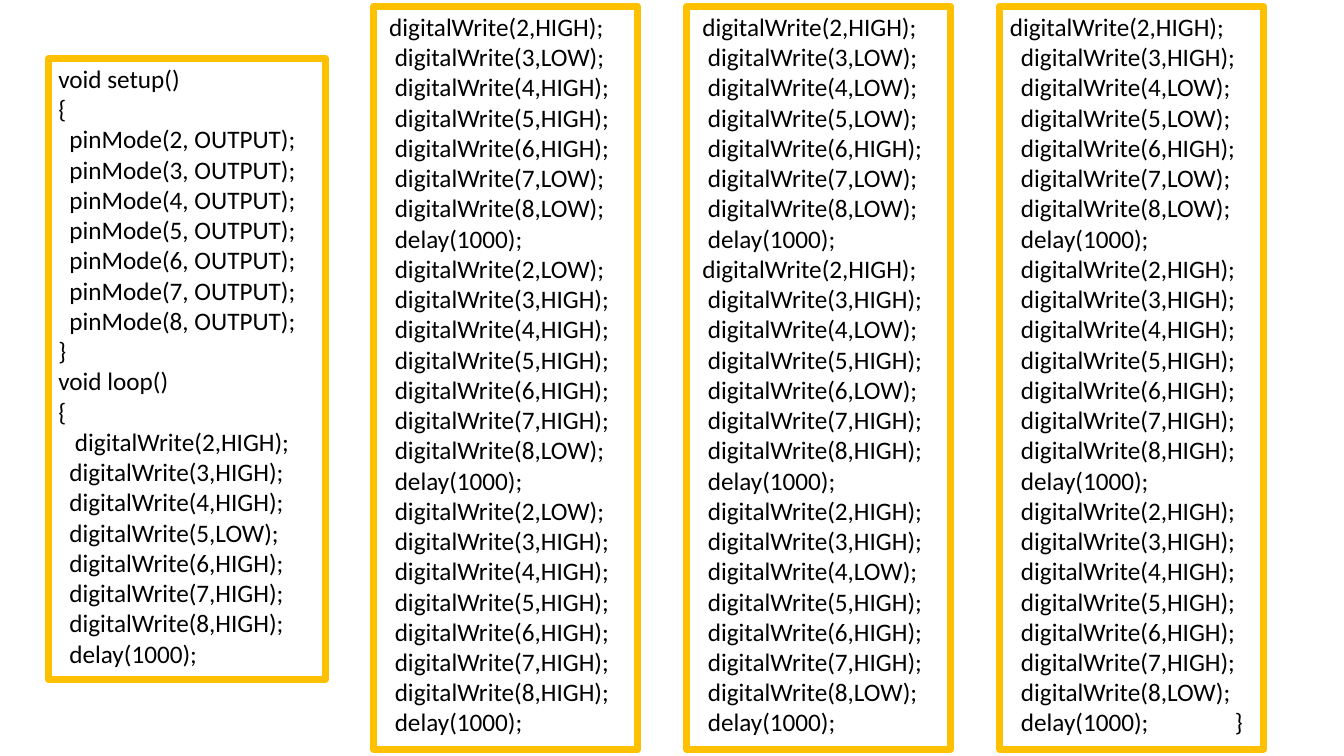
"""Builds a slide with pin control code in four framed columns."""
from dataclasses import dataclass

from lxml import etree
from pptx import Presentation
from pptx import util as u
from pptx.dml import color
from pptx.enum import text
from pptx.oxml import ns


@dataclass(frozen=True)
class Theme:
    """Colours, font and sizes of the slide."""
    frame: color.RGBColor = color.RGBColor(0xFF, 0xC0, 0x00)
    ink: color.RGBColor = color.RGBColor(0, 0, 0)
    font: str = "Calibri"
    size: u.Pt = u.Pt(18)
    border: u.Pt = u.Pt(5)
    indent: u.Cm = u.Cm(0.14)
    brace_tab: u.Cm = u.Cm(5.87)


THEME = Theme()
PINS = range(2, 9)
LOOP_COLUMNS = [
    [(1, "1011100"), (2, "0111110"), (2, "0111111")],
    [(1, "1000100"), (1, "1101011"), (2, "1101110")],
    [(0, "1100100"), (2, "1111111"), (2, "1111110")],
]


def step_lines(first_indent, levels):
    """Return (indent, code) lines that set every pin and then wait."""
    lines = [(2, f"digitalWrite({pin},{'HIGH' if level == '1' else 'LOW'});")
             for pin, level in zip(PINS, levels)]
    lines[0] = (first_indent, lines[0][1])
    return lines + [(2, "delay(1000);")]


def setup_lines():
    """Return the setup function and the start of the loop."""
    modes = [(2, f"pinMode({pin}, OUTPUT);") for pin in PINS]
    return [(0, "void setup()"), (0, "{"), *modes, (0, "}"),
            (0, "void loop()"), (0, "{"), *step_lines(3, "1110111")]


def add_right_tab(p, position):
    """Give a paragraph one right-aligned tab stop."""
    tabs = etree.SubElement(p._p.get_or_add_pPr(), ns.qn("a:tabLst"))
    etree.SubElement(tabs, ns.qn("a:tab"), pos=str(position), algn="r")


def add_code_line(p, indent, code):
    """Write one indented line of code."""
    p._p.get_or_add_pPr().set("marL", str(indent * THEME.indent))
    if "\t" in code:
        add_right_tab(p, THEME.brace_tab)
    r = p.add_run()
    r.text = code
    r.font.name = THEME.font
    r.font.size = THEME.size
    r.font.color.rgb = THEME.ink


def add_code_box(s, left, top, width, height, lines):
    """Add a framed text box that holds lines of code."""
    sp = s.shapes.add_textbox(left, top, width, height)
    sp.line.color.rgb = THEME.frame
    sp.line.width = THEME.border
    tf = sp.text_frame
    tf.word_wrap = True
    tf.auto_size = text.MSO_AUTO_SIZE.SHAPE_TO_FIT_TEXT
    for i, (indent, code) in enumerate(lines):
        p = tf.add_paragraph() if i else tf.paragraphs[0]
        add_code_line(p, indent, code)


def main():
    """Build and save the slide."""
    prs = Presentation()
    prs.slide_width, prs.slide_height = u.Cm(33.87), u.Cm(19.05)
    s = prs.slides.add_slide(prs.slide_layouts[6])
    add_code_box(s, u.Cm(1.22), u.Cm(1.47), u.Cm(6.99), u.Cm(15.65), setup_lines())
    for col, steps in enumerate(LOOP_COLUMNS):
        lines = [line for step in steps for line in step_lines(*step)]
        if steps is LOOP_COLUMNS[-1]:
            lines[-1] = (2, "delay(1000);\t}")
        add_code_box(s, u.Cm(9.42 + 7.89 * col), u.Cm(0.16), u.Cm(6.65), u.Cm(18.72), lines)
    prs.save("out.pptx")


if __name__ == "__main__":
    main()
